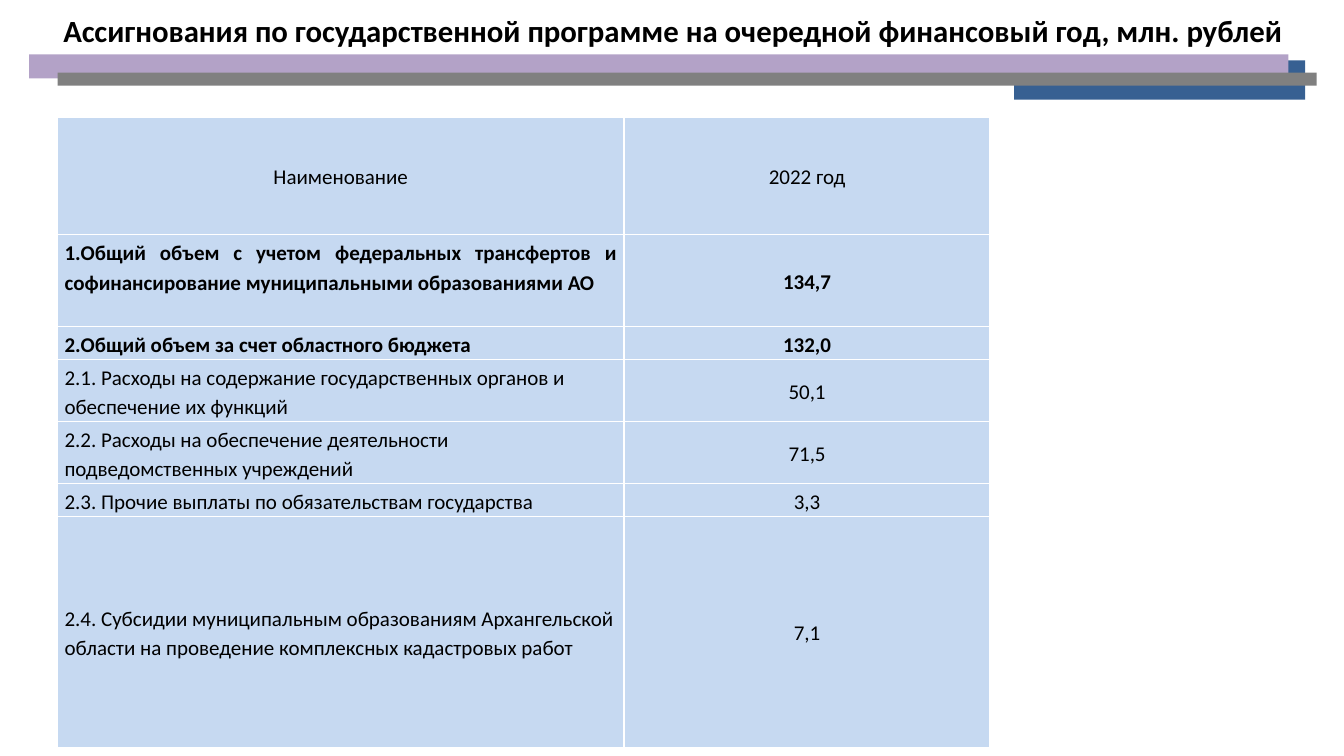
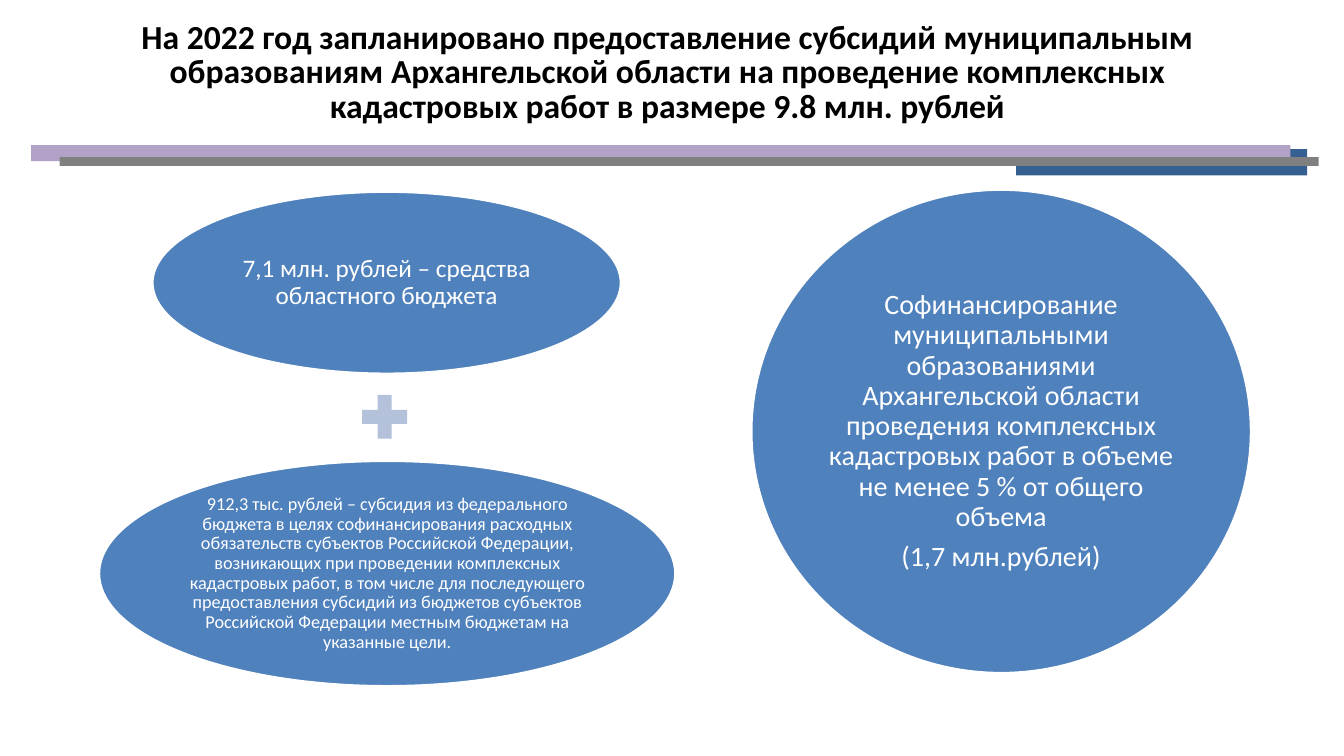
from collections import namedtuple

from pptx import Presentation
from pptx import util as u
from pptx.dml.color import RGBColor
from pptx.enum import shapes, text
from pptx.oxml import parse_xml
from pptx.oxml.ns import nsdecls

FONT = "Calibri"
BLACK, WHITE = "000000", "FFFFFF"
LILAC, GREY, NAVY = "B3A2C7", "808080", "376092"
CELL_BLUE, OVAL_BLUE, PLUS_BLUE = "C6D9F1", "4F81BD", "B3C1DB"

CENTER, LEFT, JUSTIFY = text.PP_ALIGN.CENTER, text.PP_ALIGN.LEFT, text.PP_ALIGN.JUSTIFY
TOP, MIDDLE = text.MSO_ANCHOR.TOP, text.MSO_ANCHOR.MIDDLE

Box = namedtuple("Box", "left top width height")

# Colour and place of each band, as shares of the header strip
BANDS = [
    (NAVY, Box(0.765, 0.13, 0.226, 0.87)),
    (LILAC, Box(0, 0, 0.978, 0.53)),
    (GREY, Box(0.022, 0.4, 0.978, 0.29)),
]

# Name, amount, row height, bold, alignment and anchor of the name
BUDGET_ROWS = [
    ("Наименование", "2022 год", 1.17, False, CENTER, MIDDLE),
    ("1.Общий объем с учетом федеральных трансфертов и софинансирование "
     "муниципальными образованиями АО", "134,7", 0.91, True, JUSTIFY, TOP),
    ("2.Общий объем за счет областного бюджета", "132,0", 0.31, True, JUSTIFY, MIDDLE),
    ("2.1. Расходы на содержание государственных органов и обеспечение их функций",
     "50,1", 0.61, False, LEFT, MIDDLE),
    ("2.2. Расходы на обеспечение деятельности подведомственных учреждений",
     "71,5", 0.61, False, LEFT, MIDDLE),
    ("2.3. Прочие выплаты по обязательствам государства", "3,3", 0.31, False, LEFT, MIDDLE),
    ("2.4. Субсидии муниципальным образованиям Архангельской области на проведение "
     "комплексных кадастровых работ", "7,1", 2.29, False, LEFT, MIDDLE),
]
BUDGET_COLUMNS = [5.62, 3.63]


def inches(box):
    return [u.Inches(value) for value in box]


def share(box, part):
    """Place a part, given in shares, inside a box given in inches."""
    return Box(box.left + part.left * box.width, box.top + part.top * box.height,
               part.width * box.width, part.height * box.height)


def paint(fill, colour):
    fill.solid()
    fill.fore_color.rgb = RGBColor.from_string(colour)


def write(frame, words, size, colour, bold=False, align=CENTER, spacing=1.0, after=0):
    """Fill a text frame; each line of words is one paragraph."""
    frame.word_wrap = True
    frame.text = words
    for paragraph in frame.paragraphs:
        paragraph.alignment = align
        paragraph.line_spacing = spacing
        paragraph.space_after = u.Pt(after)
        for run in paragraph.runs:
            run.font.name = FONT
            run.font.size = u.Pt(size)
            run.font.bold = bold
            paint(run.font.fill, colour)


def add_figure(slide, kind, box, colour, outline=None):
    shape = slide.shapes.add_shape(kind, *inches(box))
    shape.shadow.inherit = False
    paint(shape.fill, colour)
    if outline:
        paint(shape.line.fill, outline)
        shape.line.width = u.Pt(2)
    else:
        shape.line.fill.background()
    return shape


def add_title(slide, box, words, size):
    title = slide.shapes.add_textbox(*inches(box))
    write(title.text_frame, words, size, BLACK, bold=True, spacing=0.85)


def add_bands(slide, strip):
    for colour, part in BANDS:
        add_figure(slide, shapes.MSO_SHAPE.RECTANGLE, share(strip, part), colour)


def add_oval(slide, box, words, size, inset):
    oval = add_figure(slide, shapes.MSO_SHAPE.OVAL, box, OVAL_BLUE, outline=WHITE)
    frame = oval.text_frame
    frame.margin_left = frame.margin_right = u.Inches(inset)
    frame.margin_top = frame.margin_bottom = u.Inches(inset)
    frame.vertical_anchor = MIDDLE
    write(frame, words, size, WHITE, spacing=0.9, after=round(0.35 * size))


def add_borders(cell, colour, points):
    properties = cell._tc.get_or_add_tcPr()
    for position, side in enumerate(("lnL", "lnR", "lnT", "lnB")):
        properties.insert(position, parse_xml(
            f'<a:{side} {nsdecls("a")} w="{u.Pt(points)}"><a:solidFill>'
            f'<a:srgbClr val="{colour}"/></a:solidFill></a:{side}>'))


def style_cell(cell, words, bold, align, anchor):
    paint(cell.fill, CELL_BLUE)
    add_borders(cell, WHITE, 1)
    cell.margin_left = cell.margin_right = u.Inches(0.07)
    cell.margin_top = cell.margin_bottom = u.Inches(0.02)
    cell.vertical_anchor = anchor
    write(cell.text_frame, words, 15, BLACK, bold, align, spacing=1.15)


def add_budget_table(slide, left, top):
    box = Box(left, top, sum(BUDGET_COLUMNS), sum(row[2] for row in BUDGET_ROWS))
    table = slide.shapes.add_table(len(BUDGET_ROWS), len(BUDGET_COLUMNS), *inches(box)).table
    table.first_row = table.horz_banding = False
    for column, width in zip(table.columns, BUDGET_COLUMNS):
        column.width = u.Inches(width)
    for row, (name, amount, height, bold, align, anchor) in zip(table.rows, BUDGET_ROWS):
        row.height = u.Inches(height)
        style_cell(row.cells[0], name, bold, align, anchor)
        style_cell(row.cells[1], amount, bold, CENTER, MIDDLE)


def build_budget_slide(slide):
    add_title(slide, Box(0.29, 0.12, 12.77, 0.42),
              "Ассигнования по государственной программе на очередной финансовый год, "
              "млн. рублей", 22)
    add_bands(slide, Box(0.29, 0.54, 12.77, 0.45))
    add_budget_table(slide, 0.57, 1.16)


def build_subsidy_slide(slide):
    add_title(slide, Box(0.83, 0.17, 11.58, 1.13),
              "На 2022 год запланировано предоставление субсидий муниципальным "
              "образованиям Архангельской области на проведение комплексных "
              "кадастровых работ в размере 9.8 млн. рублей", 24)
    add_bands(slide, Box(0.31, 1.44, 12.77, 0.3))
    add_oval(slide, Box(1.51, 1.9, 4.65, 1.81),
             "7,1 млн. рублей – средства областного бюджета", 18, 0.03)
    add_figure(slide, shapes.MSO_SHAPE.MATH_PLUS, Box(3.51, 3.84, 0.61, 0.59), PLUS_BLUE)
    add_oval(slide, Box(0.98, 4.57, 5.72, 2.24),
             "912,3 тыс. рублей – субсидия из федерального бюджета в целях "
             "софинансирования расходных обязательств субъектов Российской Федерации, "
             "возникающих при проведении комплексных кадастровых работ, в том числе для "
             "последующего предоставления субсидий из бюджетов субъектов Российской "
             "Федерации местным бюджетам на указанные цели.", 13, 0.02)
    add_oval(slide, Box(7.45, 1.88, 4.96, 4.8),
             "Софинансирование муниципальными образованиями Архангельской области "
             "проведения комплексных кадастровых работ в объеме не менее 5 % от общего "
             "объема\n(1,7 млн.рублей)", 20, 0.03)


def main():
    presentation = Presentation()
    presentation.slide_width = u.Inches(13.33)
    presentation.slide_height = u.Inches(7.5)
    blank = presentation.slide_layouts[6]
    for build in (build_budget_slide, build_subsidy_slide):
        build(presentation.slides.add_slide(blank))
    presentation.save("out.pptx")


if __name__ == "__main__":
    main()
